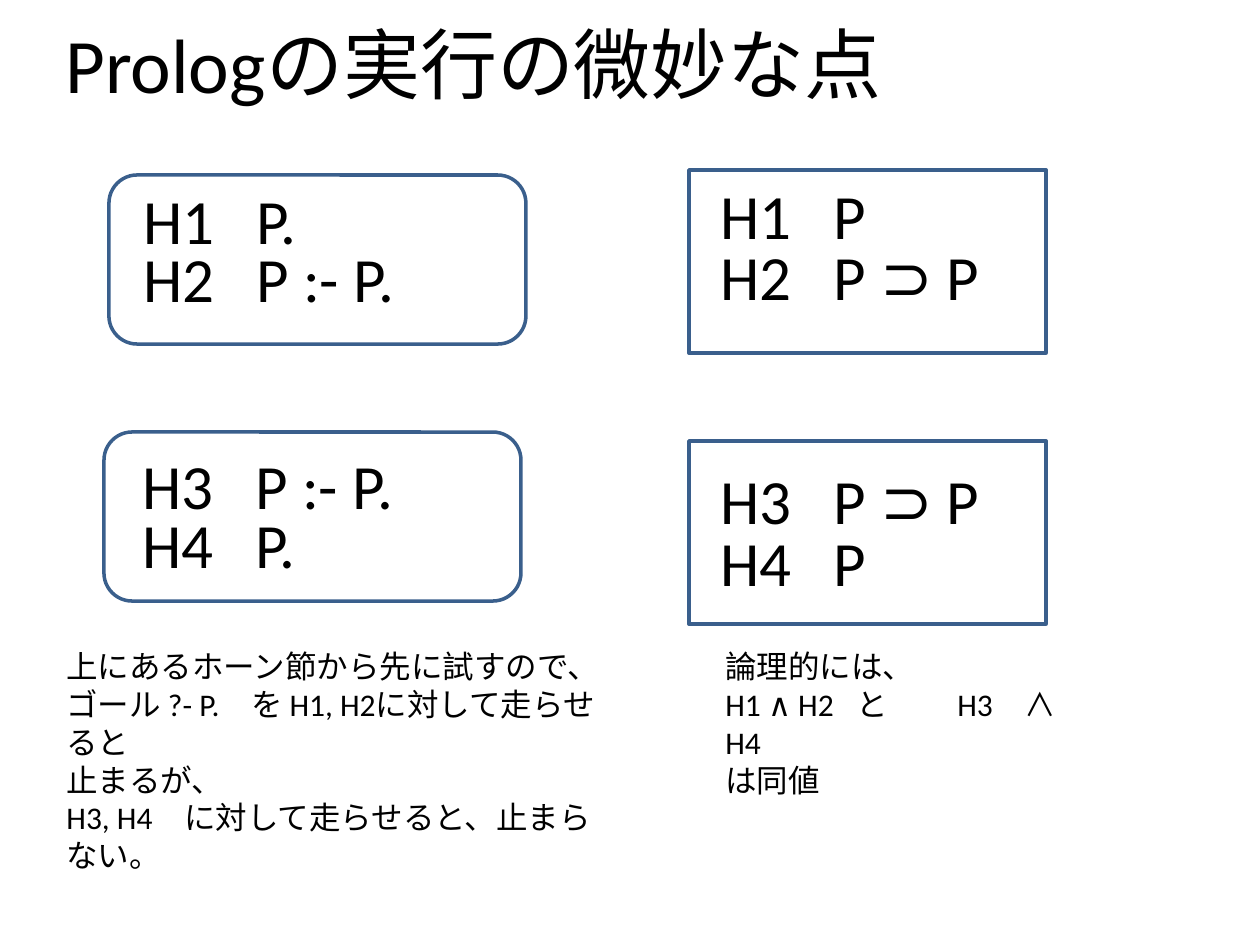
from dataclasses import dataclass

import pptx
import pptx.dml.color
import pptx.enum.shapes
import pptx.enum.text
import pptx.util
from lxml import etree
from pptx.oxml.ns import qn

SHAPE = pptx.enum.shapes.MSO_SHAPE
ALIGN = pptx.enum.text.PP_ALIGN
ANCHOR = pptx.enum.text.MSO_ANCHOR


@dataclass(frozen=True)
class Theme:
    font: str = "Calibri"
    ink: str = "000000"
    border: str = "3A5F8C"
    title: int = 44
    clause: int = 36
    note: int = 18
    line: int = 2


@dataclass(frozen=True)
class Frame:
    kind: SHAPE
    x: int
    y: int
    w: int
    h: int


@dataclass(frozen=True)
class Label:
    lines: tuple[str, ...]
    x: int
    y: int
    w: int
    h: int
    size: int
    tabs: tuple[int, ...] = ()
    wrap: bool = True
    align: ALIGN = ALIGN.LEFT
    anchor: ANCHOR = ANCHOR.TOP


THEME = Theme()
PX_PER_INCH = 126


def px(n: int) -> int:
    return round(n * 914400 / PX_PER_INCH)


def clause(name: str, body: str, x: int, y: int, w: int) -> Label:
    return Label((f"{name}\t{body}",), x, y, w, 89, THEME.clause, (113,), False)


LABELS = [
    Label(("Prologの実行の微妙な点",), 0, 0, 948, 125, THEME.title,
          align=ALIGN.CENTER, anchor=ANCHOR.MIDDLE),
    clause("H1", "P.", 131, 175, 181),
    clause("H2", "P :- P.", 131, 233, 280),
    clause("H3", "P :- P.", 130, 440, 280),
    clause("H4", "P.", 130, 499, 181),
    clause("H1", "P", 708, 170, 173),
    clause("H2", "P ⊃ P", 708, 231, 299),
    clause("H3", "P ⊃ P", 708, 455, 299),
    clause("H4", "P", 708, 517, 173),
    Label(("上にあるホーン節から先に試すので、",
           "ゴール ?- P.　を H1, H2に対して走らせると",
           "止まるが、",
           "H3, H4　に対して走らせると、止まらない。"),
          54, 641, 575, 165, THEME.note),
    Label(("論理的には、", "H1 ∧ H2\tと\tH3　∧ H4", "は同値"),
          713, 641, 358, 127, THEME.note, (131, 232)),
]

FRAMES = [
    Frame(SHAPE.ROUNDED_RECTANGLE, 109, 175, 417, 169),
    Frame(SHAPE.ROUNDED_RECTANGLE, 104, 432, 417, 169),
    Frame(SHAPE.RECTANGLE, 689, 170, 357, 183),
    Frame(SHAPE.RECTANGLE, 689, 441, 357, 183),
]


def rgb(value: str) -> pptx.dml.color.RGBColor:
    return pptx.dml.color.RGBColor.from_string(value)


def set_tabs(p, stops: tuple[int, ...]) -> None:
    tabs = etree.SubElement(p._p.get_or_add_pPr(), qn("a:tabLst"))
    for stop in stops:
        etree.SubElement(tabs, qn("a:tab"), pos=str(px(stop)), algn="l")


def draw_label(s, label: Label) -> None:
    sp = s.shapes.add_textbox(px(label.x), px(label.y), px(label.w), px(label.h))
    tf = sp.text_frame
    tf.word_wrap = label.wrap
    tf.vertical_anchor = label.anchor
    for i, line in enumerate(label.lines):
        p = tf.add_paragraph() if i else tf.paragraphs[0]
        p.alignment = label.align
        if "\t" in line:
            set_tabs(p, label.tabs)
        r = p.add_run()
        r.text = line
        r.font.name = THEME.font
        r.font.size = pptx.util.Pt(label.size)
        r.font.color.rgb = rgb(THEME.ink)


def draw_frame(s, frame: Frame) -> None:
    sp = s.shapes.add_shape(frame.kind, px(frame.x), px(frame.y), px(frame.w), px(frame.h))
    sp.shadow.inherit = False
    sp.fill.background()
    sp.line.color.rgb = rgb(THEME.border)
    sp.line.width = pptx.util.Pt(THEME.line)


def main() -> None:
    prs = pptx.Presentation()
    prs.slide_width = px(1260)
    prs.slide_height = px(945)
    s = prs.slides.add_slide(prs.slide_layouts[6])
    for label in LABELS:
        draw_label(s, label)
    for frame in FRAMES:
        draw_frame(s, frame)
    prs.save("out.pptx")


if __name__ == "__main__":
    main()
